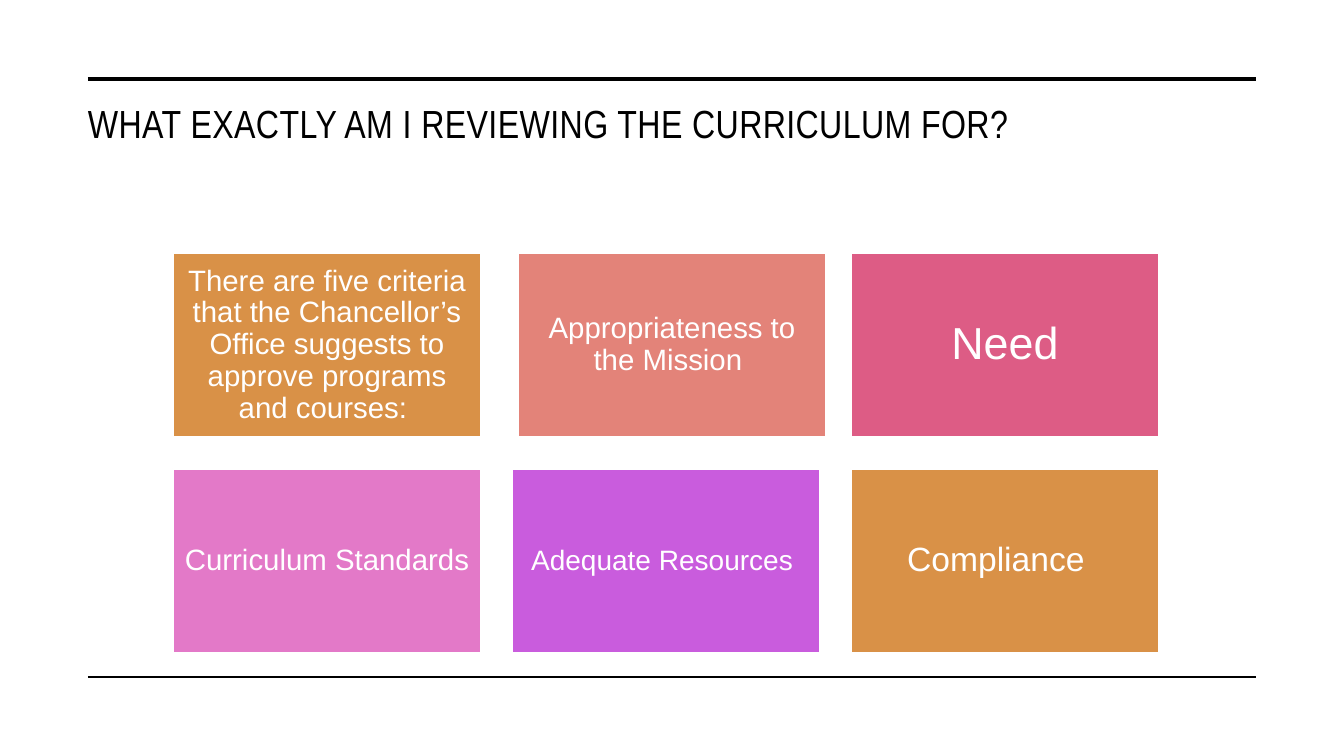
from dataclasses import dataclass

from lxml import etree
from pptx import Presentation
from pptx.dml.color import RGBColor
from pptx.enum.shapes import MSO_CONNECTOR, MSO_SHAPE
from pptx.enum.text import MSO_ANCHOR, PP_ALIGN
from pptx.oxml.ns import qn
from pptx.util import Pt

STRAIGHT = MSO_CONNECTOR.STRAIGHT
RECTANGLE = MSO_SHAPE.RECTANGLE
TOP, MIDDLE = MSO_ANCHOR.TOP, MSO_ANCHOR.MIDDLE
LEFT, CENTER = PP_ALIGN.LEFT, PP_ALIGN.CENTER

TITLE = "WHAT EXACTLY AM I REVIEWING THE CURRICULUM FOR?"

# text, fill, type size, shift to the right in px, extra right inset in px
CRITERIA = [
    ("There are five criteria that the Chancellor’s Office suggests to "
     "approve programs and courses: ", "D99147", 21, 0, 0),
    ("Appropriateness to the Mission ", "E38379", 21, 6, 0),
    ("Need", "DD5C85", 32, 0, 0),
    ("Curriculum Standards ", "E379C8", 21, 0, 0),
    ("Adequate Resources ", "C95CDD", 20, 0, 0),
    ("Compliance ", "D99147", 24, 0, 9),
]

# y in px, weight in pt
RULES = [(79, 3.5), (677, 1)]
RULE_LEFT, RULE_RIGHT = 88, 1256

SLIDE_WIDTH, SLIDE_HEIGHT = 1344, 756
TITLE_BOX = (78, 100, 1178, 127)
COLUMNS = 3
GRID_LEFT, GRID_TOP = 173, 253
COLUMN_STEP, ROW_STEP = 339, 216
CARD_WIDTH, CARD_HEIGHT = 308, 184


@dataclass(frozen=True)
class Theme:
    ink: RGBColor = RGBColor.from_string("000000")
    paper: RGBColor = RGBColor.from_string("FFFFFF")
    title_font: str = "Arial Narrow"
    card_font: str = "Arial"
    title_size: int = 28
    line_spacing: float = 0.9


THEME = Theme()


def px(length):
    return round(length * 914400 / 100.8)


def set_insets(frame, left, top, right, bottom):
    frame.margin_left, frame.margin_top = px(left), px(top)
    frame.margin_right, frame.margin_bottom = px(right), px(bottom)


def style(paragraph, align, font, size, color):
    paragraph.alignment = align
    paragraph.line_spacing = THEME.line_spacing
    paragraph.space_before = Pt(0)
    paragraph.font.name = font
    paragraph.font.size = Pt(size)
    paragraph.font.color.rgb = color


def fill_title(title):
    title.left, title.top, title.width, title.height = map(px, TITLE_BOX)
    frame = title.text_frame
    frame.text = TITLE
    frame.word_wrap = True
    frame.vertical_anchor = TOP
    set_insets(frame, 10, 5, 10, 5)
    heading = frame.paragraphs[0]
    style(heading, LEFT, THEME.title_font, THEME.title_size, THEME.ink)
    # Letter spacing is in hundredths of a point
    heading.runs[0].font._element.set("spc", "30")


def add_rule(slide, y, weight):
    rule = slide.shapes.add_connector(
        STRAIGHT, px(RULE_LEFT), px(y), px(RULE_RIGHT), px(y))
    rule.line.color.rgb = THEME.ink
    rule.line.width = Pt(weight)
    etree.SubElement(rule._element.spPr, qn("a:effectLst"))


def add_card(slide, index, text, fill, size, shift, extra_inset):
    row, column = divmod(index, COLUMNS)
    card = slide.shapes.add_shape(
        RECTANGLE,
        px(GRID_LEFT + column * COLUMN_STEP + shift),
        px(GRID_TOP + row * ROW_STEP),
        px(CARD_WIDTH), px(CARD_HEIGHT))
    card.shadow.inherit = False
    card.fill.solid()
    card.fill.fore_color.rgb = RGBColor.from_string(fill)
    card.line.color.rgb = THEME.paper
    card.line.width = Pt(1)
    frame = card.text_frame
    frame.text = text
    frame.word_wrap = True
    frame.vertical_anchor = MIDDLE
    set_insets(frame, 9, 9, 9 + extra_inset, 9)
    style(frame.paragraphs[0], CENTER, THEME.card_font, size, THEME.paper)


def main():
    deck = Presentation()
    deck.slide_width, deck.slide_height = px(SLIDE_WIDTH), px(SLIDE_HEIGHT)
    slide = deck.slides.add_slide(deck.slide_layouts.get_by_name("Title Only"))
    fill_title(slide.shapes.title)
    for y, weight in RULES:
        add_rule(slide, y, weight)
    for index, criterion in enumerate(CRITERIA):
        add_card(slide, index, *criterion)
    deck.save("out.pptx")


if __name__ == "__main__":
    main()
